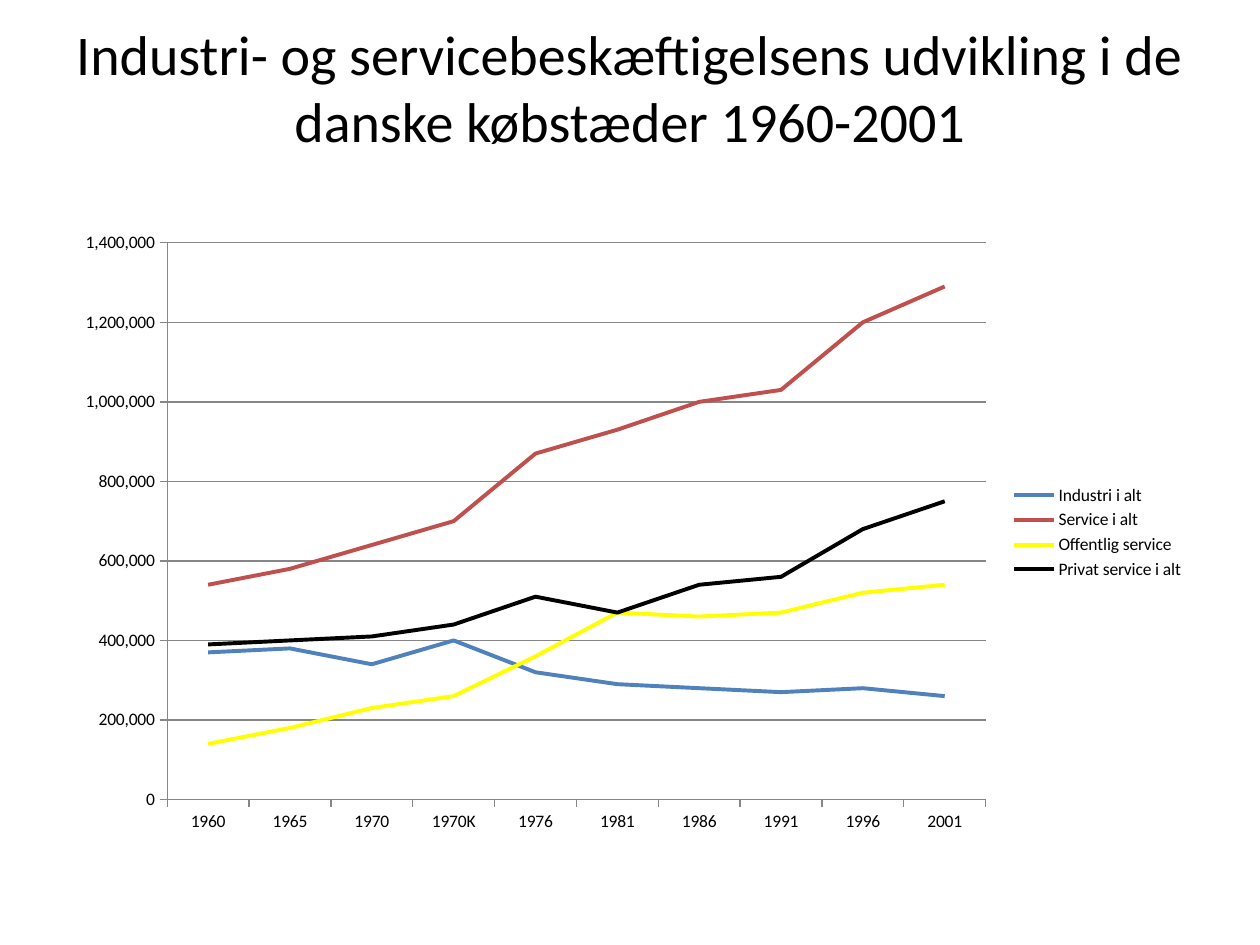
import pptx
import pptx.chart.data
import pptx.dml.color
import pptx.enum.chart
import pptx.enum.text
import pptx.util

Inches = pptx.util.Inches
HUES = {
    "text": "000000",
    "axis": "868686",
    "blue": "4F81BD",
    "red": "C0504D",
    "yellow": "FFFF00",
    "black": "000000",
}
YEARS = ["1960", "1965", "1970", "1970K", "1976", "1981", "1986", "1991", "1996", "2001"]
JOBS = [
    ("Industri i alt", "blue", [370, 380, 340, 400, 320, 290, 280, 270, 280, 260]),
    ("Service i alt", "red", [540, 580, 640, 700, 870, 930, 1000, 1030, 1200, 1290]),
    ("Offentlig service", "yellow", [140, 180, 230, 260, 360, 470, 460, 470, 520, 540]),
    ("Privat service i alt", "black", [390, 400, 410, 440, 510, 470, 540, 560, 680, 750]),
]


class Deck:
    """Holds the style and the current slide."""

    def __init__(self, wide, high):
        self.font = "Calibri"
        self.show = pptx.Presentation()
        self.show.slide_width = Inches(wide)
        self.show.slide_height = Inches(high)
        self.slide = self.show.slides.add_slide(self.show.slide_layouts[5])

    def style(self, font, size):
        font.name = self.font
        font.size = pptx.util.Pt(size)
        font.color.rgb = self.hue("text")

    def hue(self, name):
        return pptx.dml.color.RGBColor.from_string(HUES[name])

    def stroke(self, line, name, width):
        line.color.rgb = self.hue(name)
        line.width = pptx.util.Pt(width)

    def title(self, text, left, top, wide, high, size):
        shape = self.slide.shapes.title
        shape.left, shape.top = Inches(left), Inches(top)
        shape.width, shape.height = Inches(wide), Inches(high)
        frame = shape.text_frame
        frame.word_wrap = True
        frame.vertical_anchor = pptx.enum.text.MSO_ANCHOR.MIDDLE
        para = frame.paragraphs[0]
        para.alignment = pptx.enum.text.PP_ALIGN.CENTER
        run = para.add_run()
        run.text = text
        self.style(run.font, size)

    def lines(self, cats, rows, left, top, wide, high, size):
        data = pptx.chart.data.CategoryChartData(number_format="#,##0")
        data.categories = cats
        for name, _, vals in rows:
            data.add_series(name, [val * 1000 for val in vals])
        kind = pptx.enum.chart.XL_CHART_TYPE.LINE
        box = [Inches(num) for num in (left, top, wide, high)]
        chart = self.slide.shapes.add_chart(kind, *box, data).chart
        self.style(chart.font, size)
        chart.has_title = False
        chart.has_legend = True
        chart.legend.position = pptx.enum.chart.XL_LEGEND_POSITION.RIGHT
        chart.legend.include_in_layout = False
        plot = chart.plots[0]
        plot.vary_by_categories = False
        for line, (_, hue, _) in zip(plot.series, rows):
            line.smooth = False
            line.marker.style = pptx.enum.chart.XL_MARKER_STYLE.NONE
            self.stroke(line.format.line, hue, 2.25)
        for axis in (chart.category_axis, chart.value_axis):
            axis.major_tick_mark = pptx.enum.chart.XL_TICK_MARK.OUTSIDE
            self.stroke(axis.format.line, "axis", 0.75)
        axis = chart.value_axis
        axis.minimum_scale, axis.maximum_scale, axis.major_unit = 0, 1400000, 200000
        axis.has_major_gridlines = True
        self.stroke(axis.major_gridlines.format.line, "axis", 0.75)
        axis.tick_labels.number_format = "#,##0"
        axis.tick_labels.number_format_is_linked = False


def main():
    deck = Deck(10, 7.5)
    deck.title(
        "Industri- og servicebeskæftigelsens udvikling i de danske købstæder 1960-2001",
        0.5, 0.3, 9, 0.77, 32,
    )
    deck.lines(YEARS, JOBS, 0.5, 1.75, 9, 4.95, 10)
    deck.show.save("out.pptx")


if __name__ == "__main__":
    main()
